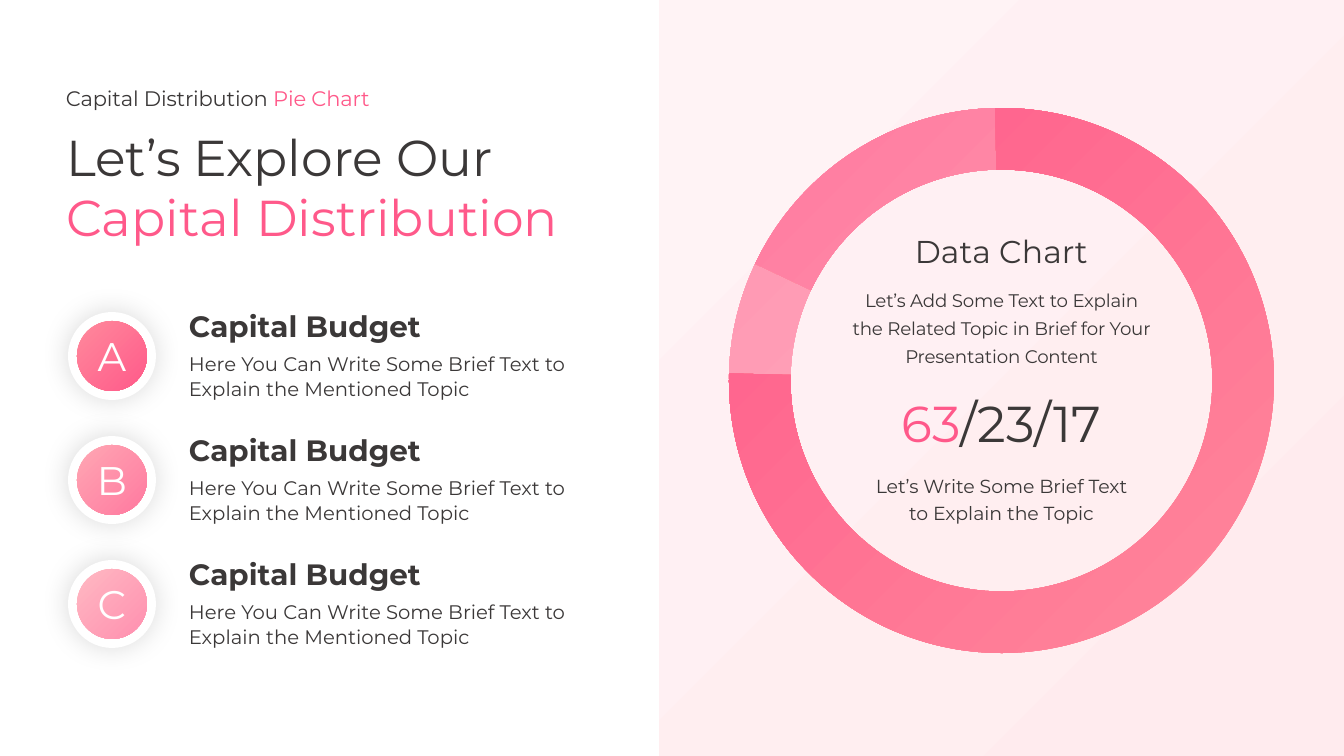
from lxml.etree import SubElement
from pptx import Presentation
from pptx.dml.color import RGBColor
from pptx.enum.shapes import MSO_SHAPE
from pptx.enum.text import MSO_ANCHOR, MSO_AUTO_SIZE, PP_ALIGN
from pptx.oxml.ns import qn
from pptx.util import Emu, Pt

SLIDE_W, SLIDE_H = 1344, 756
EMU_PER_PX = 914400 / 100.8
FONT = "Montserrat"
INK, PINK, WHITE = "3B3838", "FF598A", "FFFFFF"
DARK, MEDIUM, LIGHT = (PINK, "FF8A9C"), ("FF799F", "FFA7B4"), ("FF8FAF", "FFB9C3")
PANEL = ("FFEBEE", "FFF3F5")
TOP_LEFT = {"l": "0", "t": "0", "r": "100000", "b": "100000"}
BOTTOM_RIGHT = {"l": "100000", "t": "100000", "r": "0", "b": "0"}
ARC_END = 268.8


def px(*lengths):
    return [Emu(round(length * EMU_PER_PX)) for length in lengths]


def color(hex_code):
    return RGBColor.from_string(hex_code)


def write(frame, paragraphs, size, ink=INK, align=PP_ALIGN.LEFT, bold=False, leading=1.0,
          tracking=0):
    """Fill a text frame; a paragraph is a string or a list of (text, colour) runs.

    Tracking is in hundredths of a point.
    """
    frame.word_wrap = False
    frame.auto_size = MSO_AUTO_SIZE.SHAPE_TO_FIT_TEXT
    frame.vertical_anchor = MSO_ANCHOR.TOP
    for index, content in enumerate(paragraphs):
        paragraph = frame.add_paragraph() if index else frame.paragraphs[0]
        paragraph.alignment = align
        paragraph.line_spacing = leading
        runs = [(content, ink)] if isinstance(content, str) else content
        for words, run_ink in runs:
            run = paragraph.add_run()
            run.text = words
            run.font.name = FONT
            run.font.size = Pt(size)
            run.font.bold = bold
            run.font.color.rgb = color(run_ink)
            if tracking:
                run._r.get_or_add_rPr().set("spc", str(tracking))


def add_text(slide, box, paragraphs, **style):
    write(slide.shapes.add_textbox(*px(*box)).text_frame, paragraphs, **style)


def fill_radial(shape, stops, focus):
    """Fill with a circular two-colour gradient that starts at the focus corner."""
    shape.fill.gradient()
    for stop, hex_code in zip(shape.fill.gradient_stops, stops):
        stop.color.rgb = color(hex_code)
    shape.fill.gradient_stops[0].position = 0
    shape.fill.gradient_stops[1].position = 1
    gradient = shape._element.spPr.find(qn("a:gradFill"))
    gradient.remove(gradient.find(qn("a:lin")))
    circle = SubElement(gradient, qn("a:path"), {"path": "circle"})
    SubElement(circle, qn("a:fillToRect"), focus)


def add_plain(shapes, kind, box, fill, focus=BOTTOM_RIGHT):
    shape = shapes.add_shape(kind, *px(*box))
    shape.shadow.inherit = False
    shape.line.fill.background()
    if isinstance(fill, str):
        shape.fill.solid()
        shape.fill.fore_color.rgb = color(fill)
    else:
        fill_radial(shape, fill, focus)
    return shape


def add_soft_shadow(shape):
    effects = shape._element.spPr.find(qn("a:effectLst"))
    shadow = SubElement(effects, qn("a:outerShdw"),
                        {"blurRad": str(Pt(20)), "dist": "0", "dir": "0", "algn": "ctr"})
    black = SubElement(shadow, qn("a:srgbClr"), {"val": "000000"})
    SubElement(black, qn("a:alpha"), {"val": "15000"})


def add_heading(slide, left, top):
    add_text(slide, (left, top, 400, 35),
             [[("Capital Distribution ", INK), ("Pie Chart", PINK)]], size=15, tracking=-10)
    title = slide.shapes.title
    title.left, title.top, title.width, title.height = px(left, top + 40, 552, 132)
    write(title.text_frame,
          ["Let’s Explore Our", [("Capital Distribution", PINK)]], size=36)


def add_budget_item(slide, left, top, letter, stops):
    badge = add_plain(slide.shapes, MSO_SHAPE.OVAL, (left, top, 88, 88), WHITE)
    add_soft_shadow(badge)
    add_plain(slide.shapes, MSO_SHAPE.OVAL, (left + 9, top + 9, 70, 70), stops)
    add_text(slide, (left + 18, top + 15, 52, 58), [letter],
             size=28.5, ink=WHITE, align=PP_ALIGN.CENTER)
    add_text(slide, (left + 111, top - 9, 255, 45), ["Capital Budget"], size=21, bold=True)
    add_text(slide, (left + 111, top + 33, 407, 59),
             ["Here You Can Write Some Brief Text to", "Explain the Mentioned Topic"],
             size=14, leading=Pt(18))


def add_ring(slide, left, top, size):
    ring = slide.shapes.add_group_shape()
    for sweep, turn, stops in [(25.42, 296.9, LIGHT), (63.44, 0, MEDIUM), (272.86, 272.7, DARK)]:
        arc = add_plain(ring.shapes, MSO_SHAPE.BLOCK_ARC, (left, top, size, size),
                        stops, TOP_LEFT)
        # Angles are stored in 60000ths of a degree, adjustments in 100000ths.
        arc.adjustments[0] = (ARC_END - sweep) % 360 * 0.6
        arc.adjustments[1] = ARC_END * 0.6
        arc.adjustments[2] = 0.113
        arc.rotation = turn


def add_chart_panel(slide, left):
    add_plain(slide.shapes, MSO_SHAPE.RECTANGLE, (left, 0, SLIDE_W - left, SLIDE_H), PANEL)
    ring_left, ring_top, ring_size = left + 70, 108, 545
    add_ring(slide, ring_left, ring_top, ring_size)
    captions = [
        (119, 204, 48, ["Data Chart"], 22.5, 1.0, 0),
        (170, 328, 93, ["Let’s Add Some Text to Explain",
                        "the Related Topic in Brief for Your",
                        "Presentation Content"], 13, Pt(20), -10),
        (279, 241, 72, [[("63", PINK), ("/23/17", INK)]], 36, 1.0, 0),
        (358, 291, 62, ["Let’s Write Some Brief Text",
                        "to Explain the Topic"], 13.5, Pt(19), 0),
    ]
    for offset, width, height, lines, size, leading, tracking in captions:
        box = (ring_left + (ring_size - width) / 2, ring_top + offset, width, height)
        add_text(slide, box, lines, size=size, leading=leading, tracking=tracking,
                 align=PP_ALIGN.CENTER)


def main():
    deck = Presentation()
    deck.slide_width, deck.slide_height = px(SLIDE_W, SLIDE_H)
    slide = deck.slides.add_slide(deck.slide_layouts[5])
    add_chart_panel(slide, 659)
    add_heading(slide, 56, 81)
    for row, (letter, stops) in enumerate(zip("ABC", (DARK, MEDIUM, LIGHT))):
        add_budget_item(slide, 68, 312 + 124 * row, letter, stops)
    deck.save("out.pptx")


if __name__ == "__main__":
    main()
